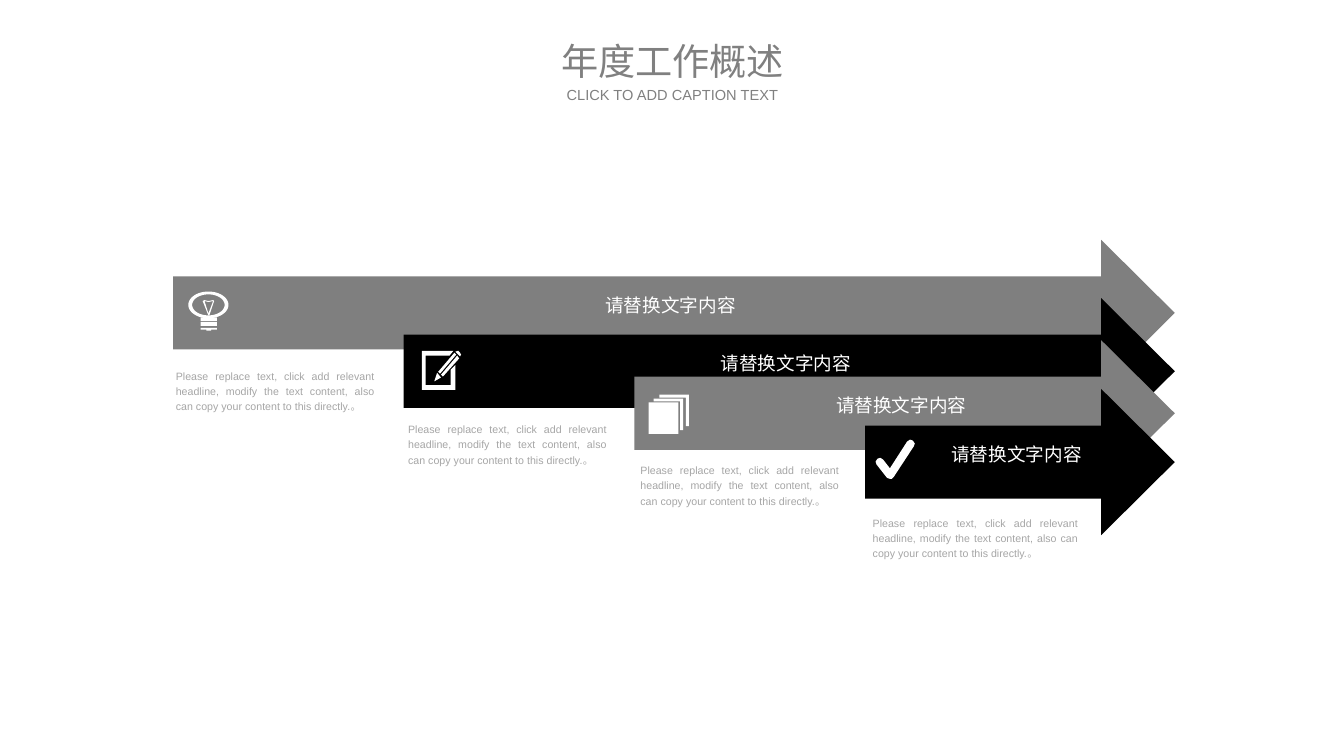
from math import cos, pi, sin

from pptx import Presentation
from pptx.dml.color import RGBColor
from pptx.enum.shapes import MSO_SHAPE
from pptx.enum.text import MSO_ANCHOR, MSO_AUTO_SIZE, PP_ALIGN
from pptx.util import Inches, Pt

WHITE = RGBColor(0xFF, 0xFF, 0xFF)
BLACK = RGBColor(0x00, 0x00, 0x00)
GRAY = RGBColor(0x7F, 0x7F, 0x7F)
TITLE_GRAY = RGBColor(0x80, 0x80, 0x80)
CAPTION_GRAY = RGBColor(0xA6, 0xA6, 0xA6)

LABEL = "请替换文字内容"
CAPTION = ("Please replace text, click add relevant headline, modify the text "
           "content, also can copy your content to this directly.。")

ARROW_TIP = 12.29
ARROW_HEIGHT = 1.53
HEAD_WIDTH = 0.77
FIRST_LEFT, LAST_LEFT = 1.81, 9.05
CAPTION_LEFT, CAPTION_STEP = 1.73, 2.43


def paint(sp, color):
    sp.fill.solid()
    sp.fill.fore_color.rgb = color
    sp.line.fill.background()
    sp.shadow.inherit = False
    return sp


def add_outline(shapes, x, y, color, *contours):
    """Filled polygon; each contour is a list of points relative to (x, y)."""
    paths = [[(Inches(x + px), Inches(y + py)) for px, py in c] for c in contours]
    builder = shapes.build_freeform(*paths[0][0])
    builder.add_line_segments(paths[0][1:], close=True)
    for path in paths[1:]:
        builder.move_to(*path[0])
        builder.add_line_segments(path[1:], close=True)
    return paint(builder.convert_to_shape(), color)


def add_rect(shapes, x, y, w, h):
    sp = shapes.add_shape(MSO_SHAPE.RECTANGLE, Inches(x), Inches(y), Inches(w), Inches(h))
    paint(sp, WHITE)


def write(sp, text, size, color, align, insets, spacing=1.0,
          anchor=MSO_ANCHOR.MIDDLE, auto_size=MSO_AUTO_SIZE.NONE):
    tf = sp.text_frame
    sides = ("margin_left", "margin_top", "margin_right", "margin_bottom")
    frame = dict(zip(sides, map(Inches, insets)))
    frame.update(word_wrap=True, vertical_anchor=anchor, auto_size=auto_size)
    p = tf.paragraphs[0]
    r = p.add_run()
    r.text = text
    formats = (
        (tf, frame),
        (p, {"alignment": align, "line_spacing": spacing, "space_before": Pt(0)}),
        (r.font, {"name": "Arial", "size": Pt(size)}),
    )
    for target, values in formats:
        for name, value in values.items():
            setattr(target, name, value)
    r.font.color.rgb = color


def bulb_icon(shapes, x, y):
    x, y = x + 0.16, y + 0.54

    def ellipse(rx, ry, steps=48):
        angles = [2 * pi * i / steps for i in range(steps)]
        return [(0.21 + rx * cos(a), 0.14 + ry * sin(a)) for a in angles]

    add_outline(shapes, x, y, WHITE, ellipse(0.21, 0.14), ellipse(0.17, 0.11))
    # Filament
    add_outline(shapes, x, y, WHITE,
                [(0.27, 0.1), (0.26, 0.09), (0.21, 0.1), (0.17, 0.09),
                 (0.15, 0.1), (0.21, 0.25), (0.22, 0.25)],
                [(0.21, 0.23), (0.17, 0.1), (0.21, 0.11), (0.26, 0.1)])
    # Screw base
    for top in (0.27, 0.32):
        add_rect(shapes, x + 0.13, y + top, 0.17, 0.04)
    add_outline(shapes, x, y, WHITE,
                [(0.13, 0.4), (0.19, 0.4), (0.19, 0.41), (0.24, 0.41),
                 (0.24, 0.4), (0.3, 0.4), (0.3, 0.38), (0.13, 0.38)])


def note_icon(shapes, x, y):
    parts = {
        "tip": [(0.2, 0.29), (0.16, 0.24), (0.13, 0.33)],
        "upper barrel": [(0.34, 0.03), (0.17, 0.23), (0.19, 0.25), (0.36, 0.05)],
        "lower barrel": [(0.2, 0.26), (0.22, 0.28), (0.39, 0.09), (0.37, 0.06)],
        "eraser": [(0.35, 0.02), (0.38, 0.01), (0.4, 0.03), (0.41, 0.05), (0.4, 0.07)],
        "sheet": [(0.3, 0.37), (0.04, 0.37), (0.04, 0.06), (0.29, 0.06), (0.33, 0.01),
                  (0, 0.01), (0, 0.42), (0.35, 0.42), (0.35, 0.16), (0.3, 0.21)],
    }
    for points in parts.values():
        add_outline(shapes, x + 0.19, y + 0.54, WHITE, points)


def pages_icon(shapes, x, y):
    x, y = x + 0.15, y + 0.57
    page_edge = [(0, 0), (0.31, 0), (0.31, 0.33), (0.28, 0.33), (0.28, 0.03), (0, 0.03)]
    for dx, dy in ((0.05, 0.04), (0.11, 0)):
        add_outline(shapes, x + dx, y + dy, WHITE, page_edge)
    add_rect(shapes, x, y + 0.08, 0.31, 0.33)


def check_icon(shapes, x, y):
    add_outline(shapes, x + 0.11, y + 0.53, WHITE,
                [(0.15, 0.41), (0.12, 0.4), (0.01, 0.26), (0, 0.23), (0.02, 0.2),
                 (0.05, 0.19), (0.08, 0.21), (0.15, 0.3), (0.33, 0.02), (0.36, 0),
                 (0.39, 0.01), (0.41, 0.04), (0.4, 0.07), (0.19, 0.39), (0.17, 0.41)])


def add_heading(slide, left, top, width):
    title, caption = slide.shapes.title, slide.placeholders[1]
    rows = ((title, "年度工作概述", 28, 0, 0.49),
            (caption, "CLICK TO ADD CAPTION TEXT", 11, 0.51, 0.19))
    for sp, text, size, dy, height in rows:
        sp.left, sp.top = Inches(left), Inches(top + dy)
        sp.width, sp.height = Inches(width), Inches(height)
        write(sp, text, size, TITLE_GRAY, PP_ALIGN.CENTER, (0, 0, 0, 0))


def add_arrow(slide, left, top, color, draw_icon):
    width = ARROW_TIP - left
    neck = width - HEAD_WIDTH
    quarter = ARROW_HEIGHT / 4
    sp = add_outline(slide.shapes, left, top, color,
                     [(0, quarter), (neck, quarter), (neck, 0), (width, 2 * quarter),
                      (neck, ARROW_HEIGHT), (neck, 3 * quarter), (0, 3 * quarter)])
    write(sp, LABEL, 14, WHITE, PP_ALIGN.CENTER, (0.59, 0.41, 0.66, 0.62), 1.2)
    draw_icon(slide.shapes.add_group_shape().shapes, left, top)


def add_caption(slide, left, top, width):
    sp = slide.shapes.add_textbox(Inches(left), Inches(top), Inches(width), Inches(0.59))
    write(sp, CAPTION, 8, CAPTION_GRAY, PP_ALIGN.JUSTIFY, (0.11, 0.05, 0.11, 0.05), 1.2,
          MSO_ANCHOR.TOP, MSO_AUTO_SIZE.SHAPE_TO_FIT_TEXT)


def main():
    prs = Presentation()
    prs.slide_width, prs.slide_height = Inches(14.06), Inches(7.91)
    slide = prs.slides.add_slide(prs.slide_layouts[0])

    add_heading(slide, 5.77, 0.39, 2.53)

    # Overlapping arrows: top, colour, icon, caption top, caption width
    steps = [
        (2.51, GRAY, bulb_icon, 3.79, 2.3),
        (3.12, BLACK, note_icon, 4.35, 2.3),
        (3.56, GRAY, pages_icon, 4.78, 2.3),
        (4.07, BLACK, check_icon, 5.33, 2.37),
    ]
    arrow_step = (LAST_LEFT - FIRST_LEFT) / (len(steps) - 1)
    for i, (top, color, draw_icon, caption_top, caption_width) in enumerate(steps):
        add_arrow(slide, FIRST_LEFT + i * arrow_step, top, color, draw_icon)
        add_caption(slide, CAPTION_LEFT + i * CAPTION_STEP, caption_top, caption_width)

    prs.save("out.pptx")


if __name__ == "__main__":
    main()
